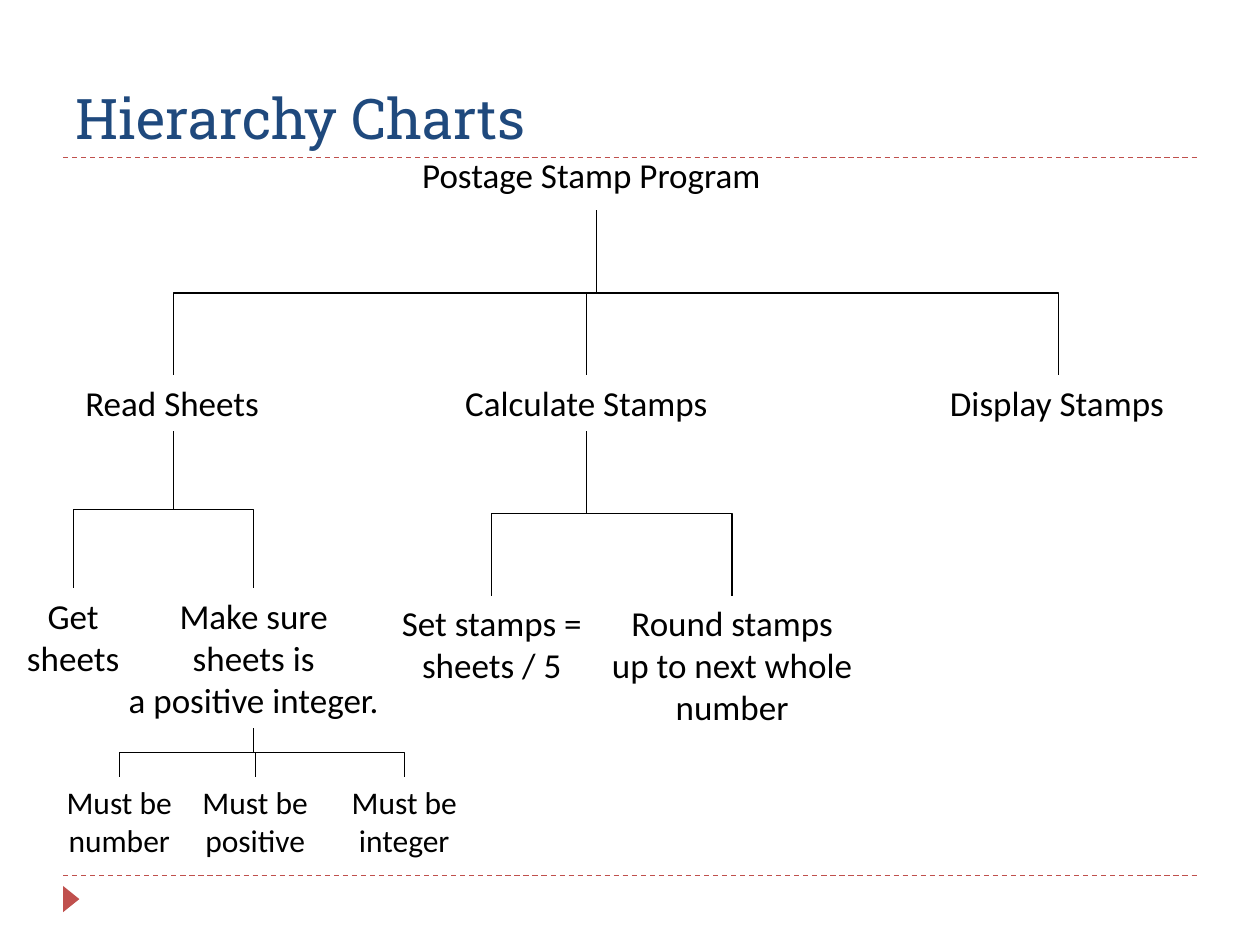
from dataclasses import dataclass

from lxml.etree import SubElement
from pptx import Presentation
from pptx.dml.color import RGBColor
from pptx.enum.dml import MSO_LINE as Dash
from pptx.enum.shapes import MSO_CONNECTOR as Link, MSO_SHAPE as Kind
from pptx.enum.text import MSO_ANCHOR as Anchor, MSO_AUTO_SIZE as Fit, PP_ALIGN as Align
from pptx.oxml.ns import qn
from pptx.shapes.autoshape import Shape
from pptx.shapes.connector import Connector
from pptx.util import Cm, Pt

BLACK = RGBColor(0x00, 0x00, 0x00)
NAVY = RGBColor(0x1F, 0x49, 0x7D)
RED = RGBColor(0xC0, 0x50, 0x4D)

# Tops of the rows, in cm
TASK, READ, CALC, RULE = 7.57, 11.86, 12.01, 15.67
# Heights of boxes with one, two or three lines, and of small two-line boxes
ONE, TWO, THREE, SMALL = 1.12, 1.96, 2.82, 1.8


@dataclass
class Node:
    key: str
    up: str  # key of the parent
    lines: list[str]
    left: float
    top: float
    width: float
    height: float
    size: int = 20
    align: Align = Align.CENTER
    wrap: bool = False


NODES = [
    Node("root", "", ["Postage Stamp Program"], 8.26, 2.97, 7.52, 1.27, align=Align.LEFT, wrap=True),
    Node("read", "root", ["Read Sheets"], 1.47, TASK, 4.06, ONE, align=Align.LEFT),
    Node("calc", "root", ["Calculate Stamps"], 9.09, TASK, 5.46, ONE),
    Node("show", "root", ["Display Stamps"], 18.9, TASK, 4.88, ONE, align=Align.LEFT),
    Node("get", "read", ["Get", "sheets"], 0.28, READ, 2.39, TWO),
    Node("check", "read", ["Make sure", "sheets is", "a positive integer."], 2.31, READ, 5.61, THREE),
    Node("set", "calc", ["Set stamps =", "sheets / 5"], 7.82, CALC, 4.19, TWO),
    Node("round", "calc", ["Round stamps", "up to next whole", "number"], 12.07, CALC, 5.38, THREE),
    Node("num", "check", ["Must be", "number"], 1.07, RULE, 2.67, SMALL, 18),
    Node("pos", "check", ["Must be", "positive"], 3.81, RULE, 2.67, SMALL, 18),
    Node("int", "check", ["Must be integer"], 6.78, RULE, 2.74, SMALL, 18, wrap=True),
]

deck = Presentation()
deck.slide_width, deck.slide_height = Cm(25.4), Cm(19.05)
slide = deck.slides.add_slide(deck.slide_layouts[6])
shapes = slide.shapes


def write(box: Shape, lines: list[str], font: str, size: int, color: RGBColor, align: Align) -> None:
    frame = box.text_frame
    for i, line in enumerate(lines):
        para = frame.add_paragraph() if i else frame.paragraphs[0]
        para.alignment = align
        run = para.add_run()
        run.text = line
        run.font.name, run.font.size = font, Pt(size)
        run.font.color.rgb = color


def style(line: Connector, color: RGBColor) -> None:
    line.line.color.rgb = color
    line.line.width = Pt(0.75)
    SubElement(line._element.spPr, qn("a:effectLst"))


def draw(node: Node) -> Shape:
    box = shapes.add_textbox(Cm(node.left), Cm(node.top), Cm(node.width), Cm(node.height))
    box.text_frame.word_wrap = node.wrap
    box.text_frame.auto_size = Fit.NONE if node.wrap else Fit.SHAPE_TO_FIT_TEXT
    write(box, node.lines, "Calibri", node.size, BLACK, node.align)
    return box


def join(top: Shape, low: Shape) -> None:
    """Bend from the bottom of one box to the top of another."""
    x1, y1 = top.left + top.width // 2, top.top + top.height
    x2, y2 = low.left + low.width // 2, low.top
    link = shapes.add_connector(Link.ELBOW, x1, y1, x2, y2)
    link.begin_connect(top, 2)
    link.end_connect(low, 0)
    # The preset bend runs sideways: turn its frame about the centre
    wide, tall = abs(x2 - x1), y2 - y1
    link.left, link.top = (x1 + x2 - tall) // 2, (y1 + y2 - wide) // 2
    link.width, link.height = tall, wide
    frame = link._element.spPr.find(qn("a:xfrm"))
    right = x2 > x1
    frame.set("rot", str((270 if right else 90) * 60000))
    frame.set("flipH", str(int(right)))
    frame.set("flipV", "0")
    style(link, BLACK)


# Dashed rules and corner mark
for y in (17.65, 3.18):
    rule = shapes.add_connector(Link.STRAIGHT, Cm(1.27), Cm(y), Cm(24.13), Cm(y))
    style(rule, RED)
    rule.line.dash_style = Dash.DASH

mark = shapes.add_shape(Kind.ISOSCELES_TRIANGLE, Cm(1.17), Cm(17.96), Cm(0.53), Cm(0.33))
mark.rotation = 90
mark.shadow.inherit = False
mark.fill.solid()
mark.fill.fore_color.rgb = RED
mark.line.fill.background()

# Title
title = shapes.add_textbox(Cm(1.27), Cm(0.43), Cm(22.86), Cm(2.74))
title.text_frame.word_wrap = True
title.text_frame.vertical_anchor = Anchor.BOTTOM
write(title, ["Hierarchy Charts"], "Roboto Slab", 32, NAVY, Align.LEFT)

# Chart
boxes = {node.key: draw(node) for node in NODES}
for node in NODES:
    if node.up:
        join(boxes[node.up], boxes[node.key])

deck.save("out.pptx")
